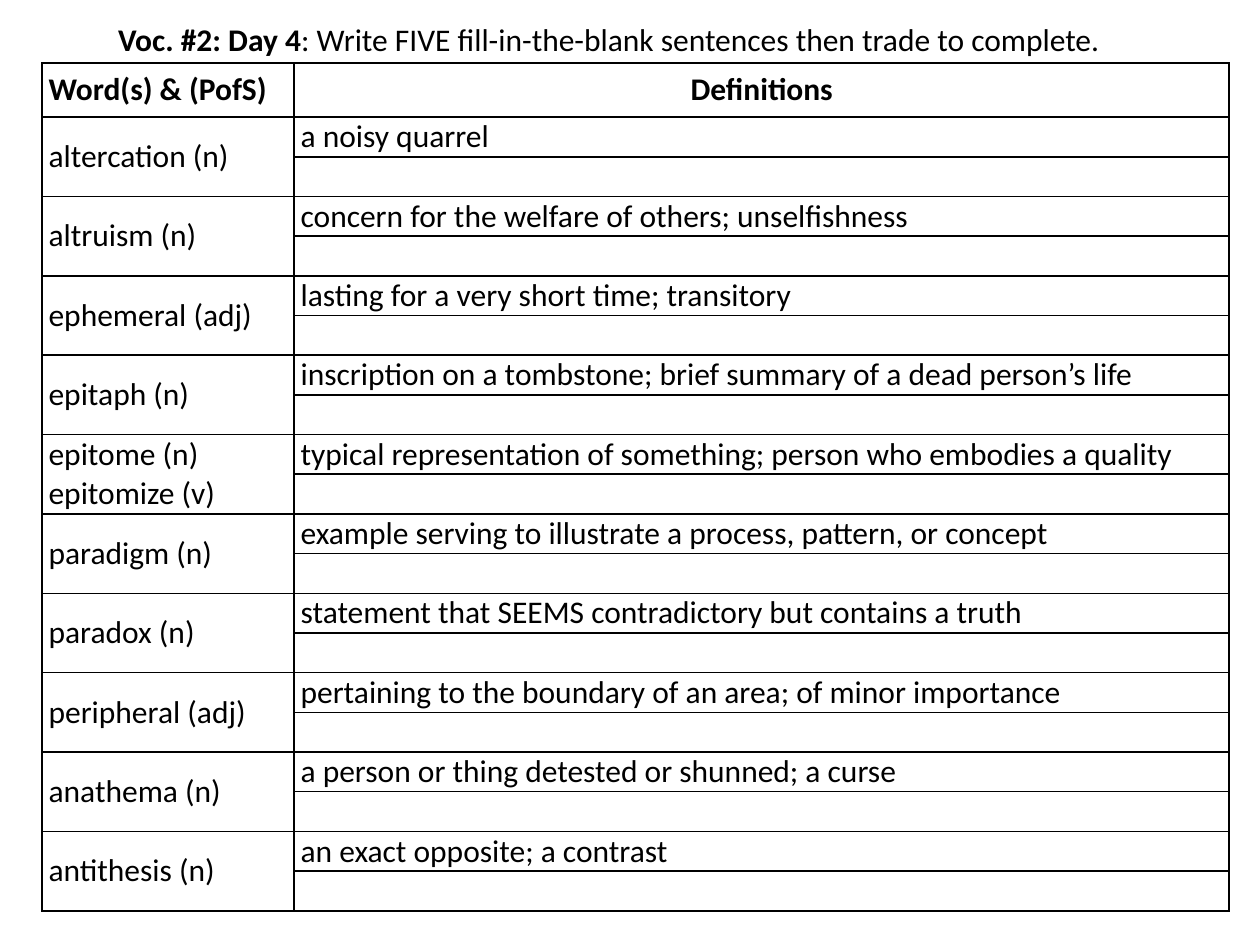
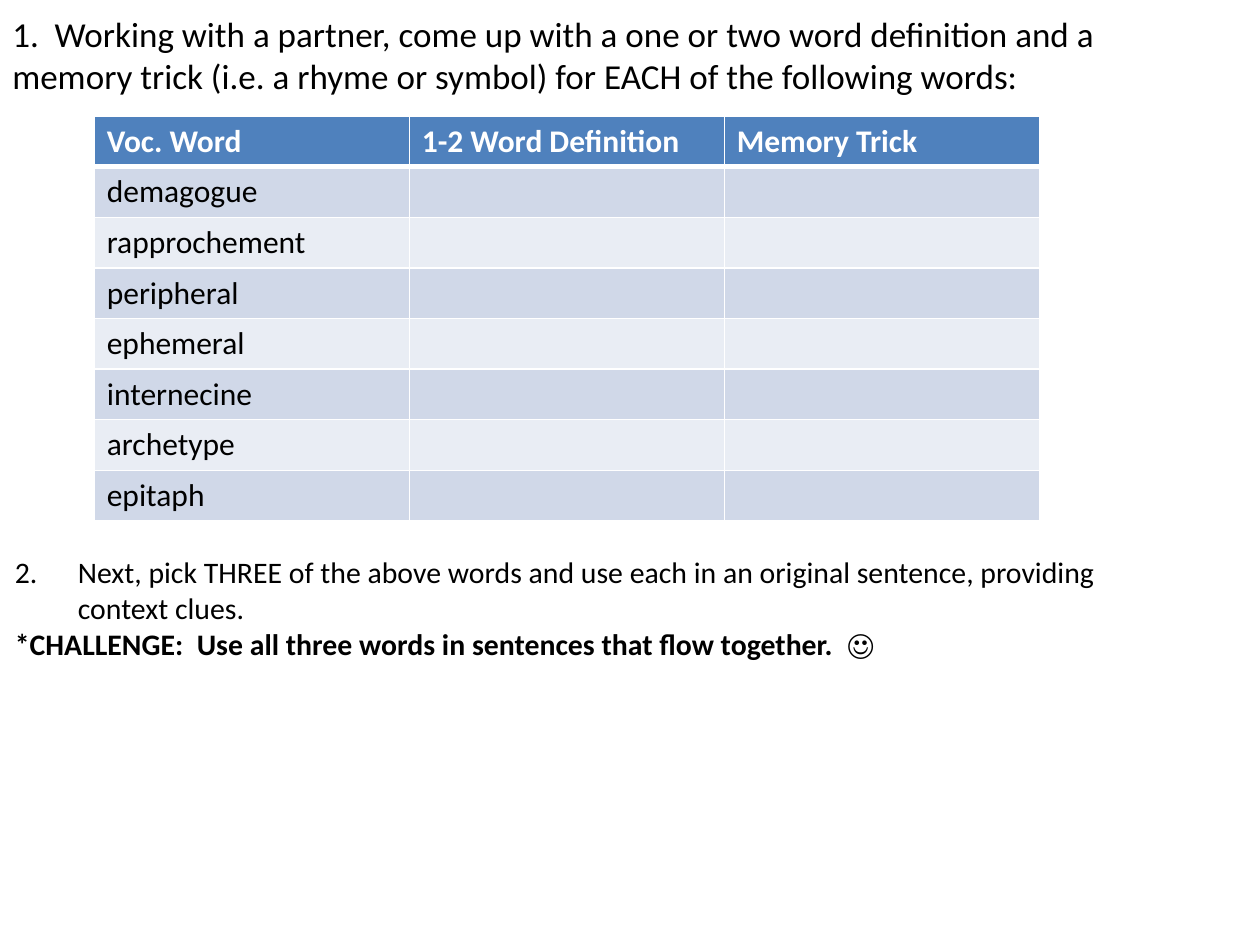
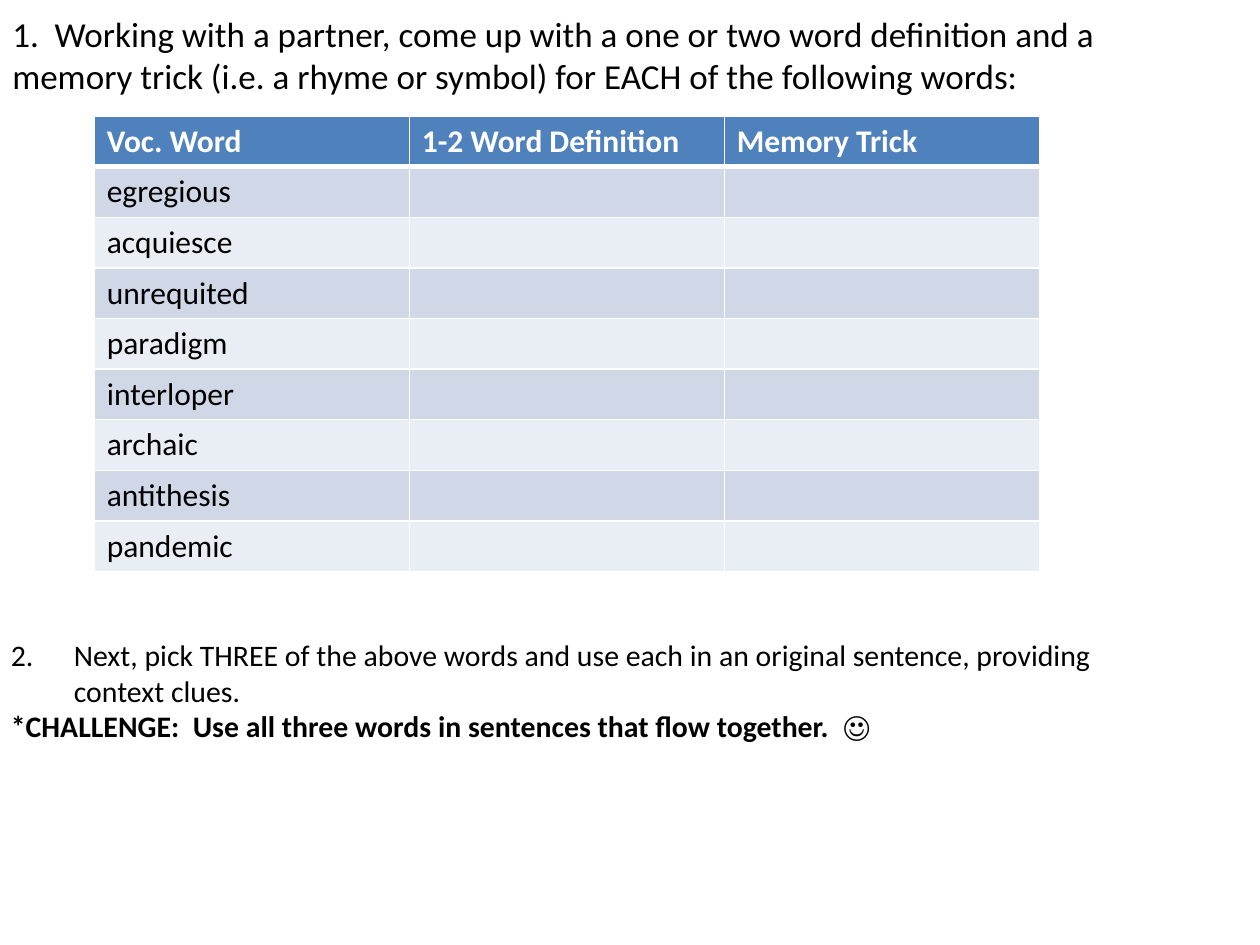
"""Build three vocabulary worksheets: a definition list and two partner drills."""
from lxml.etree import SubElement
from pptx import Presentation
from pptx.dml.color import RGBColor
from pptx.enum.text import MSO_ANCHOR, PP_ALIGN
from pptx.oxml import parse_xml
from pptx.oxml.ns import nsdecls, qn
from pptx.util import Cm, Pt

color = RGBColor.from_string
FONT = "Calibri"
BLACK = "000000"
WHITE = "FFFFFF"
HEADER_BLUE = "4F81BD"
BANDS = ["D0D8E8", "E9EDF4"]


def add_text(slide, left, top, width, height, size, lines):
    frame = slide.shapes.add_textbox(Cm(left), Cm(top), Cm(width), Cm(height)).text_frame
    frame.word_wrap = True
    frame.vertical_anchor = MSO_ANCHOR.MIDDLE
    frame.text = "\n".join(lines)
    for paragraph in frame.paragraphs:
        paragraph.font.name = FONT
        paragraph.font.size = Pt(size)
        paragraph.font.color.rgb = color(BLACK)
    return frame.paragraphs


def fill_cell(cell, text, ink, bold, border, fill=None, bottom_width=1):
    cell.text = text
    for paragraph in cell.text_frame.paragraphs:
        paragraph.font.name = FONT
        paragraph.font.size = Pt(18)
        paragraph.font.bold = bold
        paragraph.font.color.rgb = color(ink)
    properties = cell._tc.get_or_add_tcPr()
    for side, width in [("lnL", 1), ("lnR", 1), ("lnT", 1), ("lnB", bottom_width)]:
        line = SubElement(properties, qn(f"a:{side}"), w=str(Pt(width)))
        solid = SubElement(line, qn("a:solidFill"))
        SubElement(solid, qn("a:srgbClr"), val=border)
    if fill:
        cell.fill.solid()
        cell.fill.fore_color.rgb = color(fill)
    else:
        cell.fill.background()


deck = Presentation()
deck.slide_width = Cm(25.4)
deck.slide_height = Cm(19.05)
blank = deck.slide_layouts[6]

definitions = [
    ("altercation (n)", "a noisy quarrel"),
    ("altruism (n)", "concern for the welfare of others; unselfishness"),
    ("ephemeral (adj)", "lasting for a very short time; transitory"),
    ("epitaph (n)", "inscription on a tombstone; brief summary of a dead person’s life"),
    ("epitome (n)\nepitomize (v)",
     "typical representation of something; person who embodies a quality"),
    ("paradigm (n)", "example serving to illustrate a process, pattern, or concept"),
    ("paradox (n)", "statement that SEEMS contradictory but contains a truth"),
    ("peripheral (adj)", "pertaining to the boundary of an area; of minor importance"),
    ("anathema (n)", "a person or thing detested or shunned; a curse"),
    ("antithesis (n)", "an exact opposite; a contrast"),
]
glossary_rows = [("Word(s) & (PofS)", "Definitions")]
for word, meaning in definitions:
    glossary_rows += [(word, meaning), ("", "")]

glossary_slide = deck.slides.add_slide(blank)
heading = add_text(glossary_slide, 1.7, 0, 21.16, 1.57, 18, ["Voc. #2: Day 4"])[0]
heading.alignment = PP_ALIGN.CENTER
heading.runs[0].font.bold = True
heading.add_run().text = ": Write FIVE fill-in-the-blank sentences then trade to complete."

glossary = glossary_slide.shapes.add_table(
    len(glossary_rows), 2, Cm(0.85), Cm(1.27), Cm(23.93), Cm(17.09)).table
glossary.horz_banding = False
glossary.columns[0].width = Cm(5.08)
glossary.columns[1].width = Cm(18.85)
for r, texts in enumerate(glossary_rows):
    glossary.rows[r].height = Cm(0.8 if r else 1.09)
    for c, text in enumerate(texts):
        cell = glossary.cell(r, c)
        fill_cell(cell, text, BLACK, r == 0, BLACK)
        cell.margin_left = cell.margin_right = Cm(0.13)
        cell.margin_top = cell.margin_bottom = 0
        cell.vertical_anchor = MSO_ANCHOR.MIDDLE
glossary.cell(0, 1).text_frame.paragraphs[0].alignment = PP_ALIGN.CENTER
for r in range(1, len(glossary_rows), 2):
    glossary.cell(r, 0).merge(glossary.cell(r + 1, 0))

drills = [
    (["demagogue", "rapprochement", "peripheral", "ephemeral", "internecine",
      "archetype", "epitaph"], 0.05, 11.23),
    (["egregious", "acquiesce", "unrequited", "paradigm", "interloper",
      "archaic", "antithesis", "pandemic"], -0.03, 12.9),
]
for words, task_left, task_top in drills:
    drill_slide = deck.slides.add_slide(blank)
    add_text(drill_slide, 0, 0.08, 22.86, 2.03, 20, [
        "1.  Working with a partner, come up with a one or two word definition and a "
        "memory trick (i.e. a rhyme or symbol) for EACH of the following words:"])

    drill_rows = [("Voc. Word", "1-2 Word Definition", "Memory Trick")]
    drill_rows += [(word, "", "") for word in words]
    drill = drill_slide.shapes.add_table(
        len(drill_rows), 3, Cm(1.9), Cm(2.34), Cm(19.05), Cm(1.02 * len(drill_rows))).table
    for r, texts in enumerate(drill_rows):
        for c, text in enumerate(texts):
            if r == 0:
                fill_cell(drill.cell(r, c), text, WHITE, True, WHITE, HEADER_BLUE, 3)
            else:
                fill_cell(drill.cell(r, c), text, BLACK, False, WHITE, BANDS[(r - 1) % 2])

    task, challenge = add_text(drill_slide, task_left, task_top, 22.86, 2.03, 17, [
        "Next, pick THREE of the above words and use each in an original sentence, "
        "providing context clues.",
        "*CHALLENGE:  Use all three words in sentences that flow together.  ☺"])
    challenge.font.bold = True
    numbering = task._p.get_or_add_pPr()
    numbering.set("marL", str(Cm(1.27)))
    numbering.set("indent", str(Cm(-1.27)))
    numbering.insert(0, parse_xml(
        f'<a:buAutoNum {nsdecls("a")} type="arabicPeriod" startAt="2"/>'))

deck.save("out.pptx")
